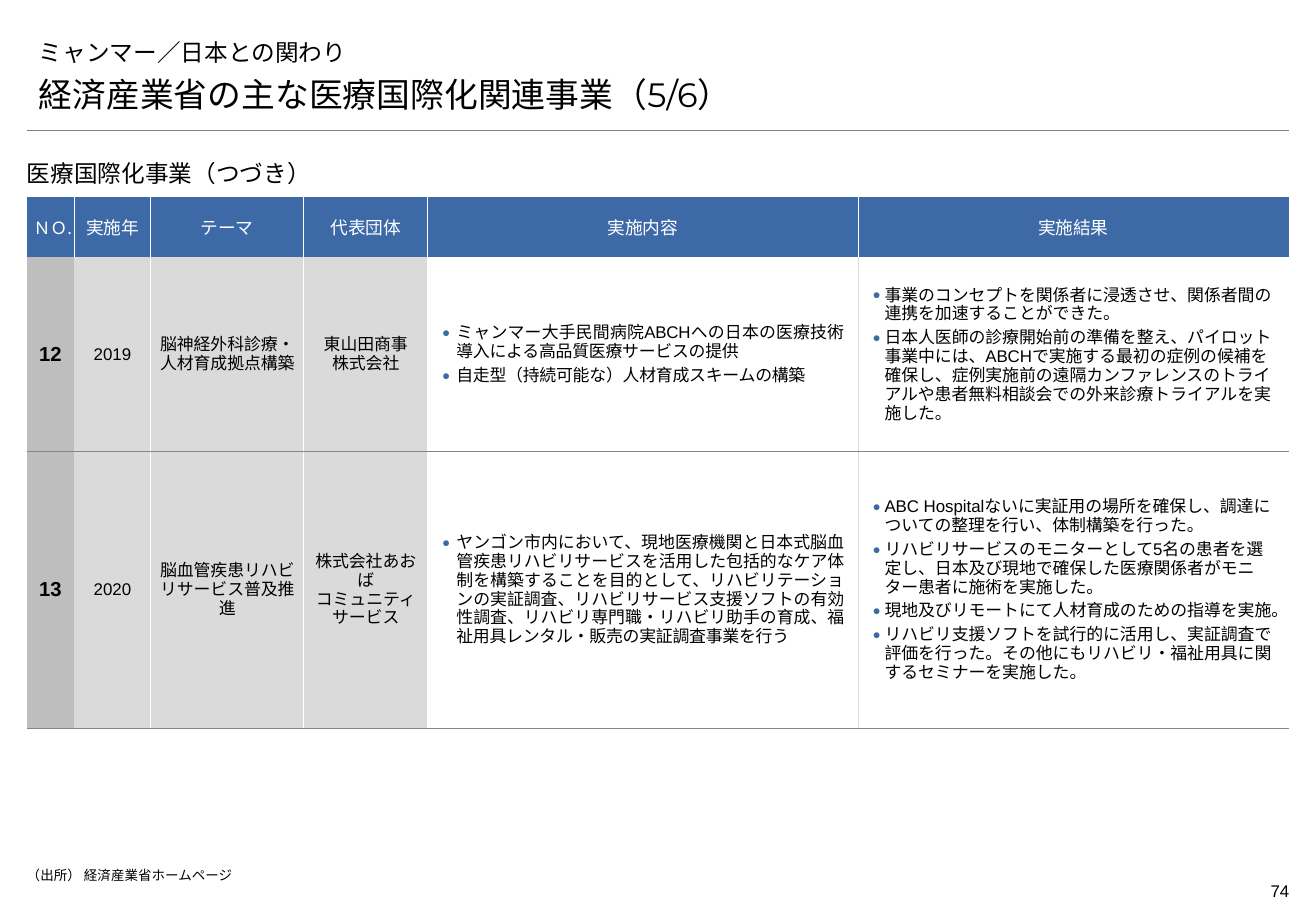
from lxml.etree import SubElement
from pptx import Presentation
from pptx.dml.color import RGBColor
from pptx.enum.shapes import MSO_CONNECTOR
from pptx.enum.text import MSO_ANCHOR, PP_ALIGN
from pptx.oxml.ns import qn
from pptx.util import Cm, Pt

COLORS = {"text": "000000", "white": "FFFFFF", "blue": "3D6AA7", "number": "BEBEBE",
          "label": "DADADA", "rule": "868686", "title_rule": "7F7F7F"}
CJK = "Noto Sans CJK JP"
LEFT, WIDTH = 0.56, 26.39
COLUMN_WIDTHS = [0.99, 1.6, 3.2, 2.59, 9, 9]
ROW_HEIGHTS = [1.27, 4.06, 5.79]
HEADERS = ["ＮＯ.", "実施年", "テーマ", "代表団体", "実施内容", "実施結果"]
PROJECTS = [
    ["12", "2019", "脳神経外科診療・\n人材育成拠点構築", ["東山田商事", "株式会社"],
     ["ミャンマー大手民間病院ABCHへの日本の医療技術導入による高品質医療サービスの提供",
      "自走型（持続可能な）人材育成スキームの構築"],
     ["事業のコンセプトを関係者に浸透させ、関係者間の連携を加速することができた。",
      "日本人医師の診療開始前の準備を整え、パイロット事業中には、ABCHで実施する最初の症例の候補を確保し、"
      "症例実施前の遠隔カンファレンスのトライアルや患者無料相談会での外来診療トライアルを実施した。"]],
    ["13", "2020", "脳血管疾患リハビリサービス普及推進", "株式会社あおば\nコミュニティサービス",
     ["ヤンゴン市内において、現地医療機関と日本式脳血管疾患リハビリサービスを活用した包括的なケア体制を"
      "構築することを目的として、リハビリテーションの実証調査、リハビリサービス支援ソフトの有効性調査、"
      "リハビリ専門職・リハビリ助手の育成、福祉用具レンタル・販売の実証調査事業を行う"],
     ["ABC Hospitalないに実証用の場所を確保し、調達についての整理を行い、体制構築を行った。",
      "リハビリサービスのモニターとして5名の患者を選定し、日本及び現地で確保した医療関係者が"
      "モニター患者に施術を実施した。",
      "現地及びリモートにて人材育成のための指導を実施。",
      "リハビリ支援ソフトを試行的に活用し、実証調査で評価を行った。"
      "その他にもリハビリ・福祉用具に関するセミナーを実施した。"]],
]
# Format of each body column: fill, side and top margins, and text options
LABEL = {"fill": "label", "margins": (0.1, 0.08)}
DETAIL = {"fill": "white", "margins": (0.3, 0.2)}
BODY_FORMATS = [
    {**LABEL, "fill": "number", "size": 12, "bold": True},
    LABEL,
    LABEL,
    {**LABEL, "margins": (0.2, 0.08)},
    {**DETAIL, "align": PP_ALIGN.JUSTIFY, "indent": 0.3, "tracking": -10},
    {**DETAIL, "align": PP_ALIGN.LEFT, "indent": 0.25},
]


def color(name):
    return RGBColor.from_string(COLORS[name])


def add_bullet(para, indent):
    """Hang the paragraph behind a small blue dot; indent is in centimetres."""
    properties = para._p.get_or_add_pPr()
    properties.set("marL", str(Cm(indent)))
    properties.set("indent", str(-Cm(indent)))
    bullet_color = SubElement(properties, qn("a:buClr"))
    SubElement(bullet_color, qn("a:srgbClr"), val=COLORS["blue"])
    SubElement(properties, qn("a:buSzPct"), val="80000")
    SubElement(properties, qn("a:buFont"), typeface="Arial")
    SubElement(properties, qn("a:buChar"), char="●")


def write(frame, text, size=10, font="Arial", asian=CJK, ink="text", bold=False,
          align=PP_ALIGN.LEFT, indent=0, tracking=0):
    """Fill a text frame; a list gives one paragraph per item."""
    frame.word_wrap = True
    for index, line in enumerate([text] if isinstance(text, str) else text):
        para = frame.add_paragraph() if index else frame.paragraphs[0]
        para.text = line
        para.alignment = align
        if indent:
            para.space_before = Pt(3 if index else 0)
            add_bullet(para, indent)
        for span in para.runs:
            span.font.size = Pt(size)
            span.font.name = font
            span.font.bold = bold
            span.font.color.rgb = color(ink)
            properties = span._r.get_or_add_rPr()
            SubElement(properties, qn("a:ea"), typeface=asian)
            if tracking:
                properties.set("spc", str(tracking))


def set_borders(cell, **sides):
    """Draw the named sides in a colour and clear the others."""
    properties = cell._tc.get_or_add_tcPr()
    for position, (side, tag) in enumerate(zip(("left", "right", "top", "bottom"),
                                               ("lnL", "lnR", "lnT", "lnB"))):
        line = properties.makeelement(qn(f"a:{tag}"), {"w": str(Pt(0.5))})
        properties.insert(position, line)
        if sides.get(side):
            fill = SubElement(line, qn("a:solidFill"))
            SubElement(fill, qn("a:srgbClr"), val=COLORS[sides[side]])
        else:
            SubElement(line, qn("a:noFill"))


class Slide:
    def __init__(self, deck):
        self.page = deck.slides.add_slide(deck.slide_layouts[5])

    def place_text(self, box, text, anchor, margins, **style):
        frame = box.text_frame
        frame.vertical_anchor = anchor
        frame.margin_left = frame.margin_right = Cm(margins[0])
        frame.margin_top, frame.margin_bottom = Cm(margins[1]), Cm(margins[2])
        write(frame, text, **style)

    def title(self, text, left, top, width, height, **style):
        box = self.page.shapes.title
        box.left, box.top, box.width, box.height = map(Cm, (left, top, width, height))
        self.place_text(box, text, MSO_ANCHOR.BOTTOM, (0.25, 0.13, 0.13), **style)

    def text(self, text, left, top, width, height, anchor=MSO_ANCHOR.TOP,
             margins=(0, 0, 0), **style):
        box = self.page.shapes.add_textbox(*map(Cm, (left, top, width, height)))
        self.place_text(box, text, anchor, margins, **style)

    def rule(self, left, top, width):
        line = self.page.shapes.add_connector(
            MSO_CONNECTOR.STRAIGHT, Cm(left), Cm(top), Cm(left + width), Cm(top))
        line.line.color.rgb = color("title_rule")
        line.line.width = Pt(0.25)
        SubElement(line._element.spPr, qn("a:effectLst"))

    def cell(self, cell, text, fill, margins, borders, align=PP_ALIGN.CENTER, **style):
        cell.fill.solid()
        cell.fill.fore_color.rgb = color(fill)
        cell.vertical_anchor = MSO_ANCHOR.MIDDLE
        cell.margin_left = cell.margin_right = Cm(margins[0])
        cell.margin_top = cell.margin_bottom = Cm(margins[1])
        set_borders(cell, **borders)
        write(cell.text_frame, text, align=align, **style)

    def project_table(self, left, top):
        table = self.page.shapes.add_table(
            len(ROW_HEIGHTS), len(COLUMN_WIDTHS), Cm(left), Cm(top),
            Cm(sum(COLUMN_WIDTHS)), Cm(sum(ROW_HEIGHTS))).table
        table.first_row = table.horz_banding = False
        for column, width in zip(table.columns, COLUMN_WIDTHS):
            column.width = Cm(width)
        for row, height in zip(table.rows, ROW_HEIGHTS):
            row.height = Cm(height)
        last = len(HEADERS) - 1
        for index, header in enumerate(HEADERS):
            borders = {"left": "white" if index else None,
                       "right": "white" if index < last else None}
            self.cell(table.cell(0, index), header, "blue", (0.1, 0.13), borders,
                      size=10.5 if index else 10, font=CJK, ink="white")
        for row, project in enumerate(PROJECTS, 1):
            for index, (text, style) in enumerate(zip(project, BODY_FORMATS)):
                borders = {
                    "left": "label" if index == last else "white" if index > 1 else None,
                    "right": "label" if index == last - 1 else "white" if 0 < index < last else None,
                    "top": "rule" if row > 1 else None,
                    "bottom": "rule"}
                self.cell(table.cell(row, index), text, borders=borders, asian="Arial", **style)


def main():
    deck = Presentation()
    deck.slide_width, deck.slide_height = Cm(27.51), Cm(19.05)
    slide = Slide(deck)
    heading = {"font": "Montserrat", "anchor": MSO_ANCHOR.BOTTOM}
    slide.rule(LEFT, 2.72, WIDTH)
    slide.title("ミャンマー／日本との関わり", LEFT, 0.53, WIDTH, 0.99, size=14, font="Montserrat")
    slide.text("経済産業省の主な医療国際化関連事業（5/6）", LEFT, 1.52, WIDTH, 0.99,
               margins=(0.25, 0.13, 0.13), size=20, **heading)
    slide.text("医療国際化事業（つづき）", LEFT, 3.12, WIDTH, 0.99,
               margins=(0, 0.13, 0.2), size=14, **heading)
    slide.project_table(LEFT, 4.11)
    slide.text("（出所） 経済産業省ホームページ", LEFT, 18.14, 24.56, 0.41, size=8)
    slide.text("74", 24.95, 18.29, 2, 0.69, margins=(0, 0.13, 0.13), align=PP_ALIGN.RIGHT)
    deck.save("out.pptx")


if __name__ == "__main__":
    main()
